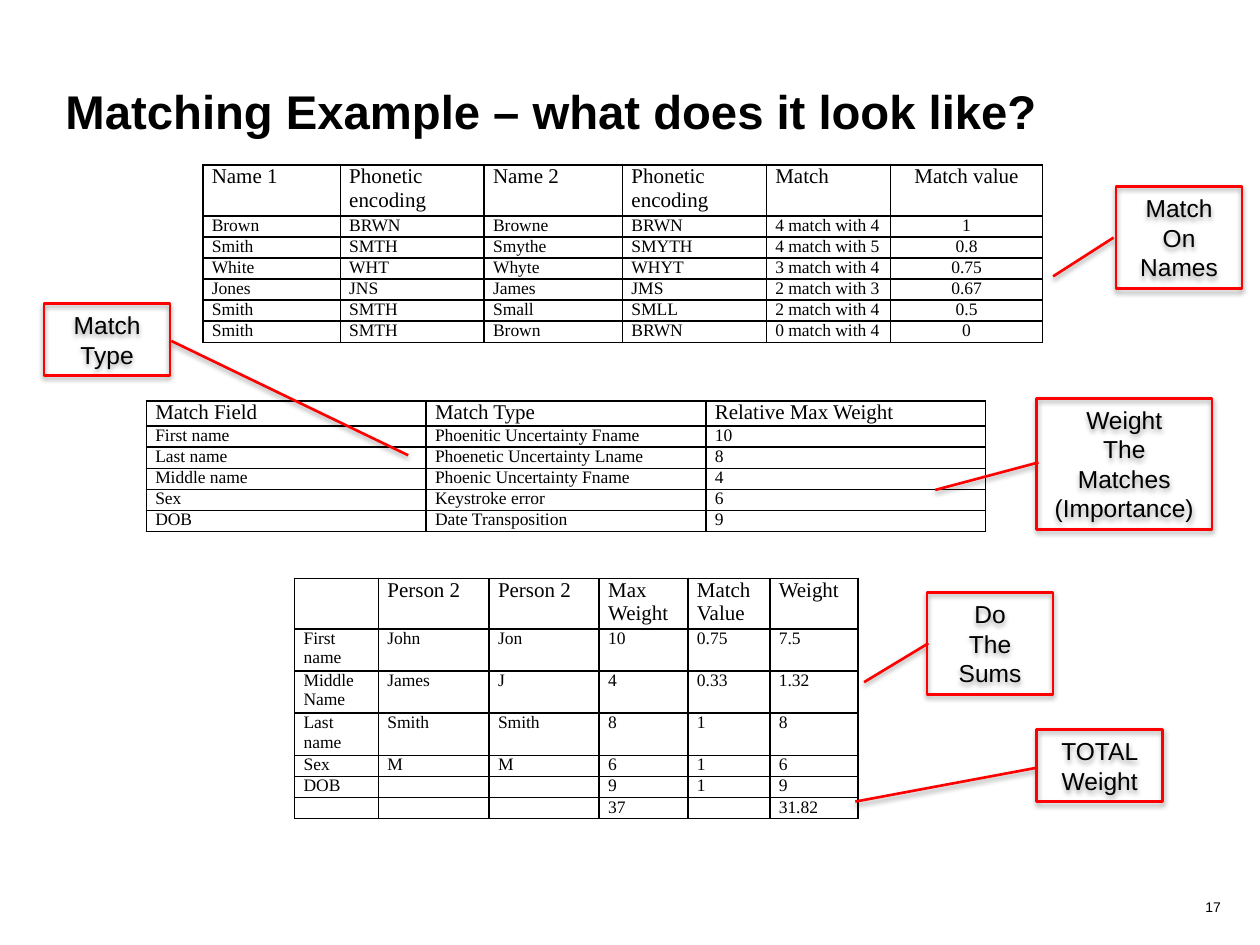
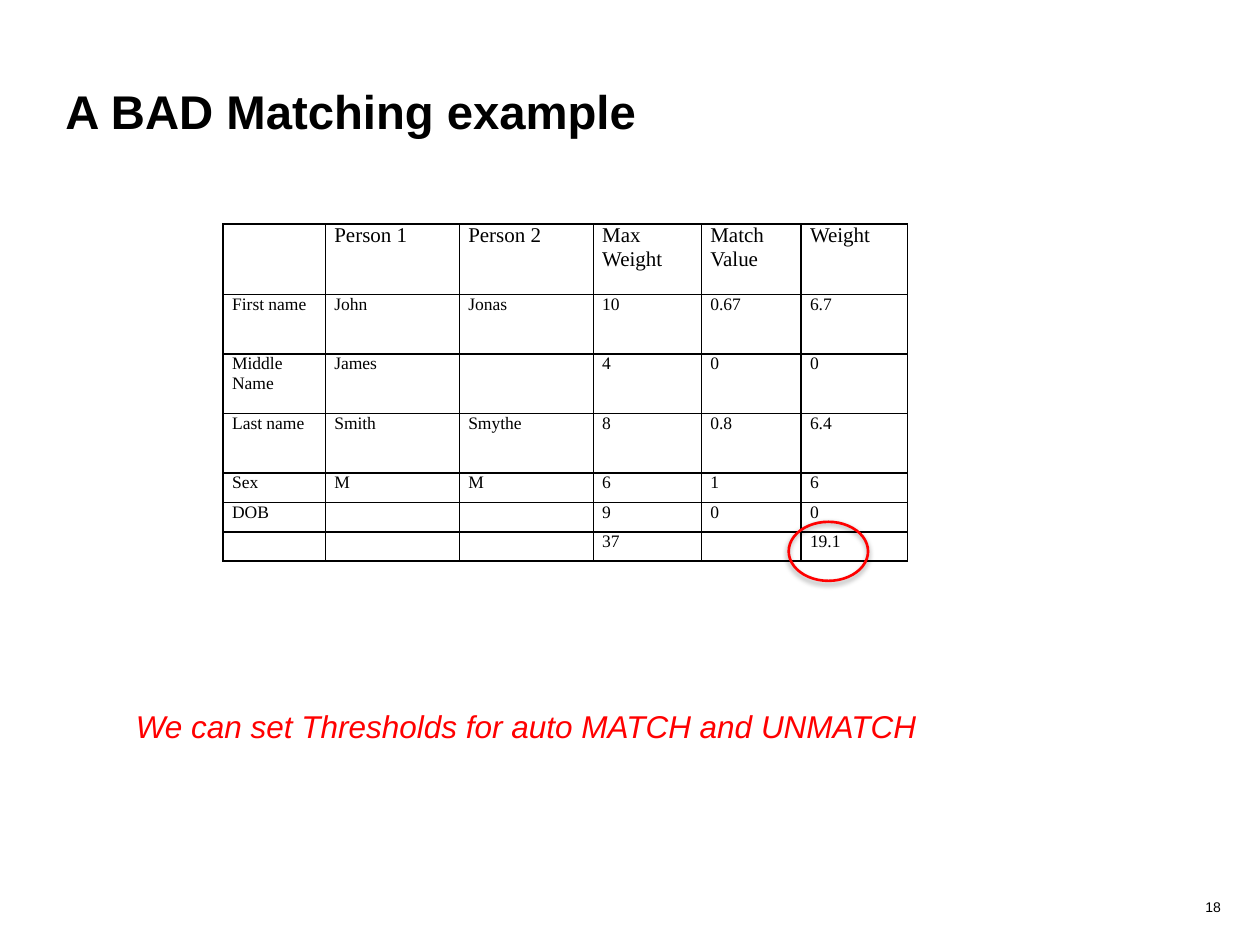
from lxml.etree import SubElement
from pptx import Presentation
from pptx.dml.color import RGBColor
from pptx.enum.shapes import MSO_SHAPE as Shape
from pptx.enum.text import MSO_ANCHOR as Anchor, MSO_AUTO_SIZE as AutoSize, PP_ALIGN as Align
from pptx.oxml.ns import qn
from pptx.util import Cm, Pt

BLACK, RED = "000000", "FF0000"
ROW = 0.42


def rgb(value):
    return RGBColor.from_string(value)


class Deck:
    """Holds the shared style and the slide being built."""

    sans, serif = "Arial", "Times New Roman"

    def __init__(self):
        self.prs = Presentation()
        self.prs.slide_width, self.prs.slide_height = Cm(25.4), Cm(19.05)

    def format(self, tf, size, font=sans, color=BLACK, align=Align.LEFT, bold=False, italic=False):
        for p in tf.paragraphs:
            p.alignment = align
            for r in p.runs:
                r.font.name, r.font.size = font, Pt(size)
                r.font.bold, r.font.italic = bold, italic
                r.font.color.rgb = rgb(color)

    def slide(self, title, number):
        self.s = self.prs.slides.add_slide(self.prs.slide_layouts[5])
        sp = self.s.shapes.title
        sp.left, sp.top, sp.width, sp.height = Cm(1.27), Cm(0.97), Cm(22.89), Cm(1.88)
        tf = sp.text_frame
        tf.text = title
        tf.auto_size, tf.vertical_anchor = AutoSize.NONE, Anchor.BOTTOM
        tf.margin_left = tf.margin_right = tf.margin_top = tf.margin_bottom = Cm(0.05)
        self.format(tf, 27, bold=True)
        self.text(str(number), 24.05, 17.98, 1.35, 0.91, 8, wrap=True)

    def text(self, text, x, y, w, h, size, wrap=False, **style):
        tf = self.s.shapes.add_textbox(Cm(x), Cm(y), Cm(w), Cm(h)).text_frame
        tf.text, tf.word_wrap = text, wrap
        self.format(tf, size, **style)

    def border(self, cell):
        tc_pr = cell._tc.get_or_add_tcPr()
        for side in ("a:lnL", "a:lnR", "a:lnT", "a:lnB"):
            ln = SubElement(tc_pr, qn(side), w=str(Pt(1)))
            fill = SubElement(ln, qn("a:solidFill"))
            SubElement(fill, qn("a:srgbClr"), val=BLACK)

    def table(self, x, y, widths, heights, rows, centered=()):
        frame = self.s.shapes.add_table(len(rows), len(widths), Cm(x), Cm(y),
                                        Cm(sum(widths)), Cm(sum(heights)))
        table = frame.table
        table.first_row = table.horz_banding = False
        for column, width in zip(table.columns, widths):
            column.width = Cm(width)
        for i, (row, height) in enumerate(zip(rows, heights)):
            table.rows[i].height = Cm(height)
            size = 10 if i else 12
            for j, value in enumerate(row):
                cell = table.cell(i, j)
                cell.margin_left = cell.margin_right = Cm(0.18)
                cell.margin_top = cell.margin_bottom = 0
                self.border(cell)
                cell.fill.background()
                tf = cell.text_frame
                if value:
                    tf.text = value
                    align = Align.CENTER if j in centered else Align.JUSTIFY
                    self.format(tf, size, self.serif, align=align)
                else:
                    tf.paragraphs[0]._p.get_or_add_endParaRPr().set("sz", str(size * 100))

    def outline(self, kind, x, y, w, h):
        sp = self.s.shapes.add_shape(kind, Cm(x), Cm(y), Cm(w), Cm(h))
        sp.fill.background()
        sp.line.color.rgb, sp.line.width = rgb(RED), Pt(1.5)
        sp.shadow.inherit = False
        effects = sp._element.spPr.find(qn("a:effectLst"))
        shadow = SubElement(effects, qn("a:outerShdw"), blurRad=str(Pt(3.1)), dist=str(Pt(1.6)),
                            dir="5400000", rotWithShape="0")
        color = SubElement(shadow, qn("a:srgbClr"), val=BLACK)
        SubElement(color, qn("a:alpha"), val="38000")
        return sp

    def callout(self, text, x, y, w, h, pointer):
        sp = self.outline(Shape.LINE_CALLOUT_1, x, y, w, h)
        for i, value in enumerate(pointer):
            sp.adjustments[i] = value
        tf = sp.text_frame
        tf.text, tf.word_wrap = text, True
        tf.auto_size, tf.vertical_anchor = AutoSize.SHAPE_TO_FIT_TEXT, Anchor.MIDDLE
        self.format(tf, 14, align=Align.CENTER)


def matching_example(deck):
    deck.slide("Matching Example – what does it look like?", 17)
    deck.table(4.09, 3.33, [2.77, 2.9, 2.79, 2.9, 2.5, 3.07], [1.02] + [ROW] * 6, [
        ["Name 1", "Phonetic encoding", "Name 2", "Phonetic encoding", "Match", "Match value"],
        ["Brown", "BRWN", "Browne", "BRWN", "4 match with 4", "1"],
        ["Smith", "SMTH", "Smythe", "SMYTH", "4 match with 5", "0.8"],
        ["White", "WHT", "Whyte", "WHYT", "3 match with 4", "0.75"],
        ["Jones", "JNS", "James", "JMS", "2 match with 3", "0.67"],
        ["Smith", "SMTH", "Small", "SMLL", "2 match with 4", "0.5"],
        ["Smith", "SMTH", "Brown", "BRWN", "0 match with 4", "0"],
    ], centered=(5,))
    deck.table(2.95, 8.08, [5.64] * 3, [0.51] + [ROW] * 5, [
        ["Match Field", "Match Type", "Relative Max Weight"],
        ["First name", "Phoenitic Uncertainty Fname", "10"],
        ["Last name", "Phoenetic Uncertainty Lname", "8"],
        ["Middle name", "Phoenic Uncertainty Fname", "4"],
        ["Sex", "Keystroke error", "6"],
        ["DOB", "Date Transposition", "9"],
    ])
    deck.table(5.94, 11.66, [1.69, 2.23, 2.22, 1.79, 1.65, 1.78],
               [1.02] + [2 * ROW] * 3 + [ROW] * 3, [
        ["", "Person 2", "Person 2", "Max Weight", "Match Value", "Weight"],
        ["First name", "John", "Jon", "10", "0.75", "7.5"],
        ["Middle Name", "James", "J", "4", "0.33", "1.32"],
        ["Last name", "Smith", "Smith", "8", "1", "8"],
        ["Sex", "M", "M", "6", "1", "6"],
        ["DOB", "", "", "9", "1", "9"],
        ["", "", "", "37", "", "31.82"],
    ])
    deck.callout("Match\nOn Names", 22.5, 3.76, 2.54, 2.06, (0.5, -0.02, 0.88, -0.5))
    deck.callout("Weight\nThe\nMatches\n(Importance)", 20.9, 8.03, 3.53, 2.64,
                 (0.49, 0.01, 0.7, -0.58))
    deck.callout("Do\nThe Sums", 18.69, 11.94, 2.54, 2.06, (0.5, 0.01, 0.88, -0.5))
    deck.callout("TOTAL\nWeight", 20.9, 14.71, 2.54, 1.45, (0.53, 0, 1, -1.44))
    deck.callout("Match\nType", 0.89, 6.12, 2.54, 1.45, (0.52, 1.01, 2.11, 2.89))


def bad_example(deck):
    deck.slide("A BAD Matching example", 18)
    deck.table(4.5, 4.52, [2.06, 2.7, 2.7, 2.18, 2.01, 2.15], [1.42] + [1.2] * 3 + [0.59] * 3, [
        ["", "Person 1", "Person 2", "Max Weight", "Match Value", "Weight"],
        ["First name", "John", "Jonas", "10", "0.67", "6.7"],
        ["Middle Name", "James", "", "4", "0", "0"],
        ["Last name", "Smith", "Smythe", "8", "0.8", "6.4"],
        ["Sex", "M", "M", "6", "1", "6"],
        ["DOB", "", "", "9", "0", "0"],
        ["", "", "", "37", "", "19.1"],
    ])
    deck.outline(Shape.OVAL, 15.9, 10.52, 1.6, 1.19)
    deck.text("We can set Thresholds for auto MATCH and UNMATCH", 2.49, 14.12, 16.41, 1.02, 18,
              color=RED, italic=True)


def main():
    deck = Deck()
    matching_example(deck)
    bad_example(deck)
    deck.prs.save("out.pptx")


if __name__ == "__main__":
    main()
